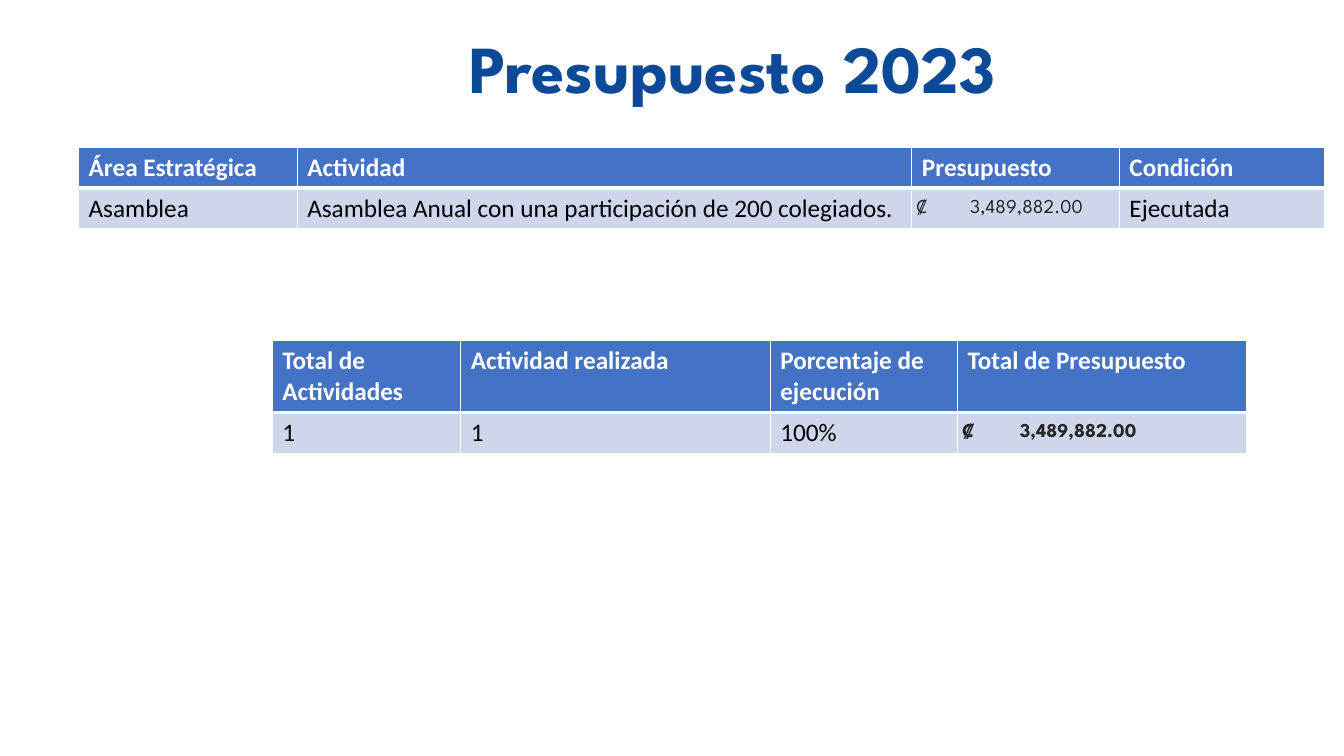
from dataclasses import dataclass

from lxml.etree import SubElement
from pptx import Presentation
from pptx.dml.color import RGBColor
from pptx.enum.text import MSO_ANCHOR, MSO_AUTO_SIZE, PP_ALIGN
from pptx.oxml.ns import qn
from pptx.util import Cm, Pt


@dataclass(frozen=True)
class Theme:
    title_color: str = "0C4A97"
    header_fill: str = "4472C4"
    body_fill: str = "CFD5EA"
    white: str = "FFFFFF"
    body_color: str = "000000"
    amount_color: str = "262626"
    display_font: str = "League Spartan"
    table_font: str = "Calibri"
    title_size: int = 48
    table_size: int = 18
    amount_size: int = 14


THEME = Theme()


@dataclass(frozen=True)
class Amount:
    text: str
    tab: float  # distance in cm from the currency sign to the figure
    bold: bool = False


def add_span(para, text, font, size, color, bold):
    span = para.add_run()
    span.text = text
    span.font.name = font
    span.font.size = Pt(size)
    span.font.bold = bold
    span.font.color.rgb = RGBColor.from_string(color)


def draw_borders(cell, bottom_width):
    properties = cell._tc.get_or_add_tcPr()
    widths = {"a:lnL": 1, "a:lnR": 1, "a:lnT": 1, "a:lnB": bottom_width}
    for side, width in widths.items():
        line = SubElement(properties, qn(side), w=str(Pt(width)))
        fill = SubElement(line, qn("a:solidFill"))
        SubElement(fill, qn("a:srgbClr"), val=THEME.white)


def fill_amount(cell, amount):
    cell.vertical_anchor = MSO_ANCHOR.MIDDLE
    cell.margin_left = Cm(0.12)
    cell.margin_right = cell.margin_top = cell.margin_bottom = 0
    para = cell.text_frame.paragraphs[0]
    stops = SubElement(para._p.get_or_add_pPr(), qn("a:tabLst"))
    SubElement(stops, qn("a:tab"), pos=str(Cm(amount.tab)), algn="l")
    add_span(para, amount.text, THEME.display_font, THEME.amount_size,
             THEME.amount_color, amount.bold)


def add_title(page, text, left, top, width, height):
    box = page.shapes.title
    box.left, box.top, box.width, box.height = map(Cm, (left, top, width, height))
    frame = box.text_frame
    frame.auto_size = MSO_AUTO_SIZE.NONE
    frame.word_wrap = True
    frame.vertical_anchor = MSO_ANCHOR.BOTTOM
    para = frame.paragraphs[0]
    para.alignment = PP_ALIGN.CENTER
    para.line_spacing = 0.9
    add_span(para, text, THEME.display_font, THEME.title_size,
             THEME.title_color, True)


def add_budget_table(page, left, top, widths, heights, rows):
    box = page.shapes.add_table(len(rows), len(widths), Cm(left), Cm(top),
                                Cm(sum(widths)), Cm(sum(heights)))
    table = box.table
    for column, width in zip(table.columns, widths):
        column.width = Cm(width)
    for row_index, values in enumerate(rows):
        header = row_index == 0
        table.rows[row_index].height = Cm(heights[row_index])
        for column_index, value in enumerate(values):
            cell = table.cell(row_index, column_index)
            draw_borders(cell, 3 if header else 1)
            cell.fill.solid()
            cell.fill.fore_color.rgb = RGBColor.from_string(
                THEME.header_fill if header else THEME.body_fill)
            if isinstance(value, Amount):
                fill_amount(cell, value)
            else:
                add_span(cell.text_frame.paragraphs[0], value, THEME.table_font,
                         THEME.table_size,
                         THEME.white if header else THEME.body_color, header)


def main():
    deck = Presentation()
    deck.slide_width, deck.slide_height = Cm(33.87), Cm(19.05)
    page = deck.slides.add_slide(deck.slide_layouts[5])

    # Heading
    add_title(page, "Presupuesto 2023", 5.77, 0.28, 25.4, 2.57)

    # Budget by activity
    add_budget_table(page, 1.98, 3.71, (5.51, 15.49, 5.23, 5.16), (1.03, 1.03), (
        ("Área Estratégica", "Actividad", "Presupuesto", "Condición"),
        ("Asamblea", "Asamblea Anual con una participación de 200 colegiados.",
         Amount("₡\t3,489,882.00", 1.35), "Ejecutada"),
    ))

    # Totals
    add_budget_table(page, 6.86, 8.59, (4.75, 7.8, 4.72, 7.29), (1.78, 1.03), (
        ("Total de Actividades", "Actividad realizada",
         "Porcentaje de ejecución", "Total de Presupuesto"),
        ("1", "1", "100%", Amount("₡\t3,489,882.00", 1.45, True)),
    ))

    deck.save("out.pptx")


if __name__ == "__main__":
    main()
